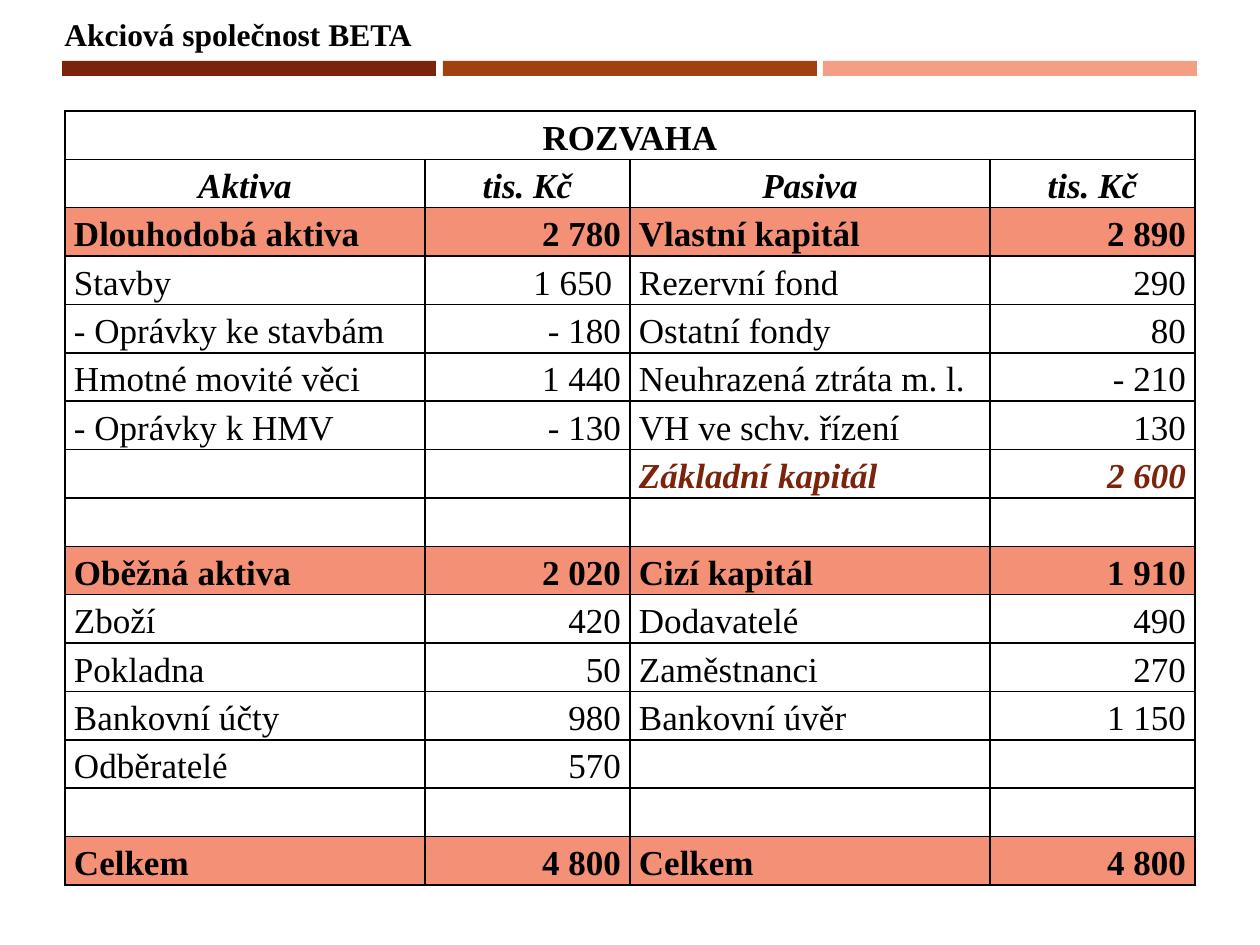
"""Build the balance sheet slide of the joint-stock company BETA."""
from lxml import etree
from pptx import Presentation
from pptx.dml.color import RGBColor
from pptx.enum.shapes import MSO_SHAPE
from pptx.enum.text import MSO_ANCHOR, MSO_AUTO_SIZE, PP_ALIGN
from pptx.oxml.ns import qn
from pptx.util import Pt

LEFT, CENTER, RIGHT, JUSTIFY = PP_ALIGN.LEFT, PP_ALIGN.CENTER, PP_ALIGN.RIGHT, PP_ALIGN.JUSTIFY
RECTANGLE = MSO_SHAPE.RECTANGLE
MIDDLE = MSO_ANCHOR.MIDDLE
FIT_SHAPE = MSO_AUTO_SIZE.SHAPE_TO_FIT_TEXT
PX = 914400 // 126
FONT = "Times New Roman"
COLORS = {
    "text": "000000",
    "accent": "7B230B",
    "brown": "9F4210",
    "salmon": "F49E86",
    "band": "F39075",
}
BARS = [(62, "accent"), (443, "brown"), (823, "salmon")]
COLUMN_WIDTHS = [360, 205, 360, 205]
TABLE_LEFT, TABLE_TOP, TABLE_HEIGHT = 65, 111, 774
ALIGNMENTS = [LEFT, RIGHT, JUSTIFY, RIGHT]
ROWS = [
    ("title", ["ROZVAHA", "", "", ""]),
    ("header", ["Aktiva", "tis. Kč", "Pasiva", "tis. Kč"]),
    ("total", ["Dlouhodobá aktiva", "2 780", "Vlastní kapitál", "2 890"]),
    ("item", ["Stavby", "1 650 ", "Rezervní fond", "290"]),
    ("item", ["- Oprávky ke stavbám", "- 180", "Ostatní fondy", "80"]),
    ("item", ["Hmotné movité věci", "1 440", "Neuhrazená ztráta m. l.", "- 210"]),
    ("item", ["- Oprávky k HMV", "- 130", "VH ve schv. řízení", "130"]),
    ("accent", ["", "", "Základní kapitál", "2 600"]),
    ("item", ["", "", "", ""]),
    ("total", ["Oběžná aktiva", "2 020", "Cizí kapitál", "1 910"]),
    ("item", ["Zboží", "420", "Dodavatelé", "490"]),
    ("item", ["Pokladna", "50", "Zaměstnanci", "270"]),
    ("item", ["Bankovní účty", "980", "Bankovní úvěr", "1 150"]),
    ("item", ["Odběratelé", "570", "", ""]),
    ("item", ["", "", "", ""]),
    ("total", ["Celkem", "4 800", "Celkem", "4 800"]),
]


def write_text(frame, text, size=20, color="text", bold=False, italic=False,
               align=LEFT, spacing=1.0):
    paragraph = frame.paragraphs[0]
    paragraph.alignment = align
    paragraph.line_spacing = spacing
    run = paragraph.add_run()
    run.text = text
    run.font.name = FONT
    run.font.size = Pt(size)
    run.font.bold = bold
    run.font.italic = italic
    run.font.color.rgb = RGBColor.from_string(COLORS[color])


def add_borders(cell):
    properties = cell._tc.get_or_add_tcPr()
    for side in ("a:lnL", "a:lnR", "a:lnT", "a:lnB"):
        line = etree.SubElement(properties, qn(side), w=str(Pt(1)))
        fill = etree.SubElement(line, qn("a:solidFill"))
        etree.SubElement(fill, qn("a:srgbClr"), val=COLORS["text"])


presentation = Presentation()
presentation.slide_width = 1260 * PX
presentation.slide_height = 945 * PX
slide = presentation.slides.add_slide(presentation.slide_layouts[6])

for left, color in BARS:
    bar = slide.shapes.add_shape(RECTANGLE, left * PX, 61 * PX, 374 * PX, 15 * PX)
    bar.shadow.inherit = False
    bar.fill.solid()
    bar.fill.fore_color.rgb = RGBColor.from_string(COLORS[color])
    bar.line.fill.background()

heading = slide.shapes.add_textbox(52 * PX, 9 * PX, 377 * PX, 50 * PX)
heading.text_frame.word_wrap = False
heading.text_frame.auto_size = FIT_SHAPE
write_text(heading.text_frame, "Akciová společnost BETA", size=18, bold=True)

table = slide.shapes.add_table(
    len(ROWS), len(COLUMN_WIDTHS), TABLE_LEFT * PX, TABLE_TOP * PX,
    sum(COLUMN_WIDTHS) * PX, TABLE_HEIGHT * PX).table
table.first_row = False
table.horz_banding = False
for column, width in zip(table.columns, COLUMN_WIDTHS):
    column.width = width * PX

for row_index, (kind, texts) in enumerate(ROWS):
    table.rows[row_index].height = TABLE_HEIGHT * PX // len(ROWS)
    for column_index, text in enumerate(texts):
        cell = table.cell(row_index, column_index)
        cell.vertical_anchor = MIDDLE
        cell.margin_left = cell.margin_right = 9 * PX
        cell.margin_top = cell.margin_bottom = 0
        add_borders(cell)
        if kind == "total":
            cell.fill.solid()
            cell.fill.fore_color.rgb = RGBColor.from_string(COLORS["band"])
        else:
            cell.fill.background()
        if text:
            write_text(
                cell.text_frame, text, spacing=1.15,
                color="accent" if kind == "accent" else "text",
                bold=kind != "item", italic=kind in ("header", "accent"),
                align=CENTER if kind in ("title", "header") else ALIGNMENTS[column_index])

table.cell(0, 0).merge(table.cell(0, 3))
presentation.save("out.pptx")
